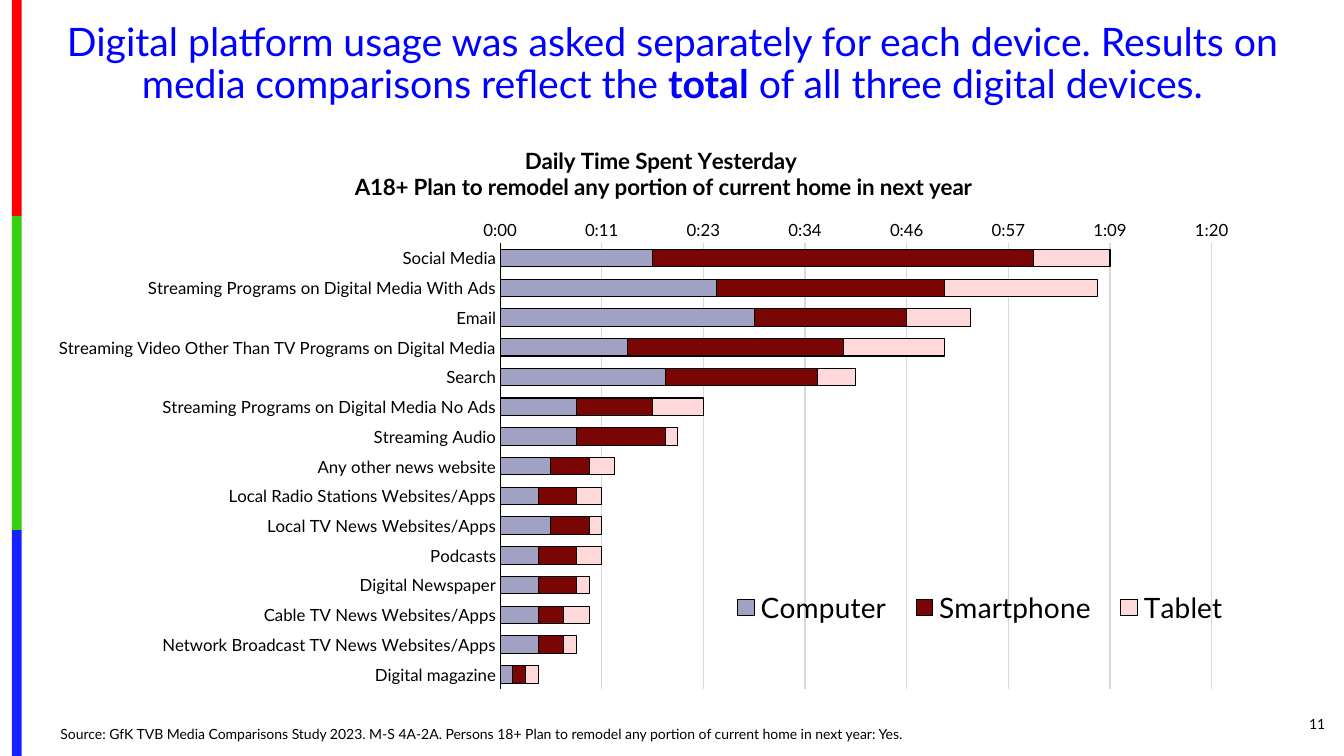
import pptx
import pptx.chart.data
import pptx.dml.color
import pptx.enum.chart
import pptx.enum.shapes
import pptx.enum.text
import pptx.oxml
import pptx.oxml.ns
import pptx.util
from pptx.util import Cm, Pt

FONT = "Lato"
COLOURS = {
    "title": "0000FF", "text": "000000", "grid": "D9D9D9",
    "red": "FE0000", "green": "36CF12", "blue": "1322FE",
    "Computer": "A1A1C3", "Smartphone": "790505", "Tablet": "FFD9D9",
}
DEVICES = ["Computer", "Smartphone", "Tablet"]
# Shares of a day on each device
DAY_SHARES = {
    "Social Media": (0.012, 0.03, 0.006),
    "Streaming Programs on Digital Media With Ads": (0.017, 0.018, 0.012),
    "Email": (0.02, 0.012, 0.005),
    "Streaming Video Other Than TV Programs on Digital Media": (0.01, 0.017, 0.008),
    "Search": (0.013, 0.012, 0.003),
    "Streaming Programs on Digital Media No Ads": (0.006, 0.006, 0.004),
    "Streaming Audio": (0.006, 0.007, 0.001),
    "Any other news website": (0.004, 0.003, 0.002),
    "Local Radio Stations Websites/Apps": (0.003, 0.003, 0.002),
    "Local TV News Websites/Apps": (0.004, 0.003, 0.001),
    "Podcasts": (0.003, 0.003, 0.002),
    "Digital Newspaper": (0.003, 0.003, 0.001),
    "Cable TV News Websites/Apps": (0.003, 0.002, 0.002),
    "Network Broadcast TV News Websites/Apps": (0.003, 0.002, 0.001),
    "Digital magazine": (0.001, 0.001, 0.001),
}


def style_font(font, size, colour="text", bold=False):
    font.name, font.size, font.bold = FONT, Pt(size), bold
    font.color.rgb = pptx.dml.color.RGBColor.from_string(COLOURS[colour])


def set_layout(part, **fractions):
    """Place a chart part by fractions of the chart area."""
    for old in part.xpath("c:layout"):
        part.remove(old)
    target = '<c:layoutTarget val="inner"/>' if part.tag.endswith("plotArea") else ""
    modes = "".join(f'<c:{side}Mode val="edge"/>' for side in "xy")
    sizes = "".join(f'<c:{key} val="{value}"/>' for key, value in fractions.items())
    layout = pptx.oxml.parse_xml(
        f'<c:layout {pptx.oxml.ns.nsdecls("c")}><c:manualLayout>'
        f"{target}{modes}{sizes}</c:manualLayout></c:layout>")
    overlay = part.xpath("c:overlay")
    if overlay:
        overlay[0].addprevious(layout)
    else:
        part.insert(0, layout)


deck = pptx.Presentation()
deck.slide_width, deck.slide_height = Cm(33.87), Cm(19.05)
page = deck.slides.add_slide(deck.slide_layouts[1])

# Title
title = page.shapes.title
title.left, title.top, title.width, title.height = Cm(1.17), Cm(0.43), Cm(31.55), Cm(2.41)
title.text_frame.vertical_anchor = pptx.enum.text.MSO_ANCHOR.MIDDLE
para = title.text_frame.paragraphs[0]
para.alignment = pptx.enum.text.PP_ALIGN.CENTER
para.line_spacing = 0.9
style_font(para.font, 28, "title")
for words, bold in [
    ("Digital platform usage was asked separately for each device. "
     "Results on media comparisons reflect the ", False),
    ("total", True),
    (" of all three digital devices.", False),
]:
    span = para.add_run()
    span.text = words
    span.font.bold = bold

# Side stripe
stripe_edges = [0, 5.45, 13.36, 19.05]
for colour, top, bottom in zip(["red", "green", "blue"], stripe_edges, stripe_edges[1:]):
    stripe = page.shapes.add_shape(
        pptx.enum.shapes.MSO_SHAPE.RECTANGLE, Cm(0.3), Cm(top), Cm(0.25), Cm(bottom - top))
    stripe.shadow.inherit = False
    stripe.fill.solid()
    stripe.fill.fore_color.rgb = pptx.dml.color.RGBColor.from_string(COLOURS[colour])
    stripe.line.fill.background()

# Chart of daily time
data = pptx.chart.data.CategoryChartData(number_format="h:mm;@")
data.categories = list(DAY_SHARES)
for device, shares in zip(DEVICES, zip(*DAY_SHARES.values())):
    data.add_series(device, shares)
chart = page.shapes.add_chart(
    pptx.enum.chart.XL_CHART_TYPE.BAR_STACKED,
    Cm(-2.11), Cm(3.58), Cm(34.62), Cm(15.27), data).chart
style_font(chart.font, 10)
chart.element.xpath("c:chart")[0].addnext(pptx.oxml.parse_xml(
    f'<c:spPr {pptx.oxml.ns.nsdecls("c", "a")}><a:noFill/><a:ln><a:noFill/></a:ln></c:spPr>'))

heading = chart.chart_title.text_frame
heading.text = ("Daily Time Spent Yesterday \n"
                "A18+ Plan to remodel any portion of current home in next year")
for para in heading.paragraphs:
    style_font(para.font, 16, bold=True)

plot = chart.plots[0]
plot.gap_width, plot.overlap, plot.vary_by_categories = 70, 100, False
for series in plot.series:
    series.format.fill.solid()
    series.format.fill.fore_color.rgb = pptx.dml.color.RGBColor.from_string(COLOURS[series.name])
    series.format.line.color.rgb = pptx.dml.color.RGBColor.from_string(COLOURS["text"])
    series.format.line.width = Pt(0.75)

for axis in (chart.category_axis, chart.value_axis):
    axis.major_tick_mark = axis.minor_tick_mark = pptx.enum.chart.XL_TICK_MARK.NONE
    style_font(axis.tick_labels.font, 12)
chart.category_axis.reverse_order = True
chart.value_axis.minimum_scale = 0
chart.value_axis.maximum_scale = 0.06
chart.value_axis.major_unit = 0.008
chart.value_axis.tick_labels.number_format = "h:mm;@"
chart.value_axis.tick_labels.number_format_is_linked = False
chart.value_axis.format.line.fill.background()
for line, colour in [(chart.category_axis.format.line, "text"),
                     (chart.value_axis.major_gridlines.format.line, "grid")]:
    line.color.rgb = pptx.dml.color.RGBColor.from_string(COLOURS[colour])
    line.width = Pt(0.75)

chart.has_legend = True
chart.legend.position = pptx.enum.chart.XL_LEGEND_POSITION.BOTTOM
chart.legend.include_in_layout = False
style_font(chart.legend.font, 20)

set_layout(chart.element.xpath("c:chart/c:title")[0], x=0.317, y=0)
set_layout(chart.element.xpath(".//c:plotArea")[0], x=0.425, y=0.167, w=0.555, h=0.736)
set_layout(chart.element.xpath(".//c:legend")[0], x=0.583, y=0.738, w=0.383, h=0.06)

# Source line
source = page.placeholders[1]
source.left, source.top, source.width, source.height = Cm(1.27), Cm(18.14), Cm(23.9), Cm(0.69)
source.text_frame.vertical_anchor = pptx.enum.text.MSO_ANCHOR.BOTTOM
para = source.text_frame.paragraphs[0]
para.text = ("Source: GfK TVB Media Comparisons Study 2023. M-S 4A-2A. "
             "Persons 18+ Plan to remodel any portion of current home in next year: Yes.")
para.space_before = Pt(0)
bullet = para._p.get_or_add_pPr()
bullet.set("marL", "0")
bullet.set("indent", "0")
bullet.append(pptx.oxml.parse_xml(f'<a:buNone {pptx.oxml.ns.nsdecls("a")}/>'))
style_font(para.font, 10)

# Page number
box = page.shapes.add_textbox(Cm(30.91), Cm(17.73), Cm(2.74), Cm(1.02))
box.text_frame.word_wrap = True
box.text_frame.vertical_anchor = pptx.enum.text.MSO_ANCHOR.MIDDLE
para = box.text_frame.paragraphs[0]
para.text = "11"
para.alignment = pptx.enum.text.PP_ALIGN.RIGHT
style_font(para.font, 10)

deck.save("out.pptx")
